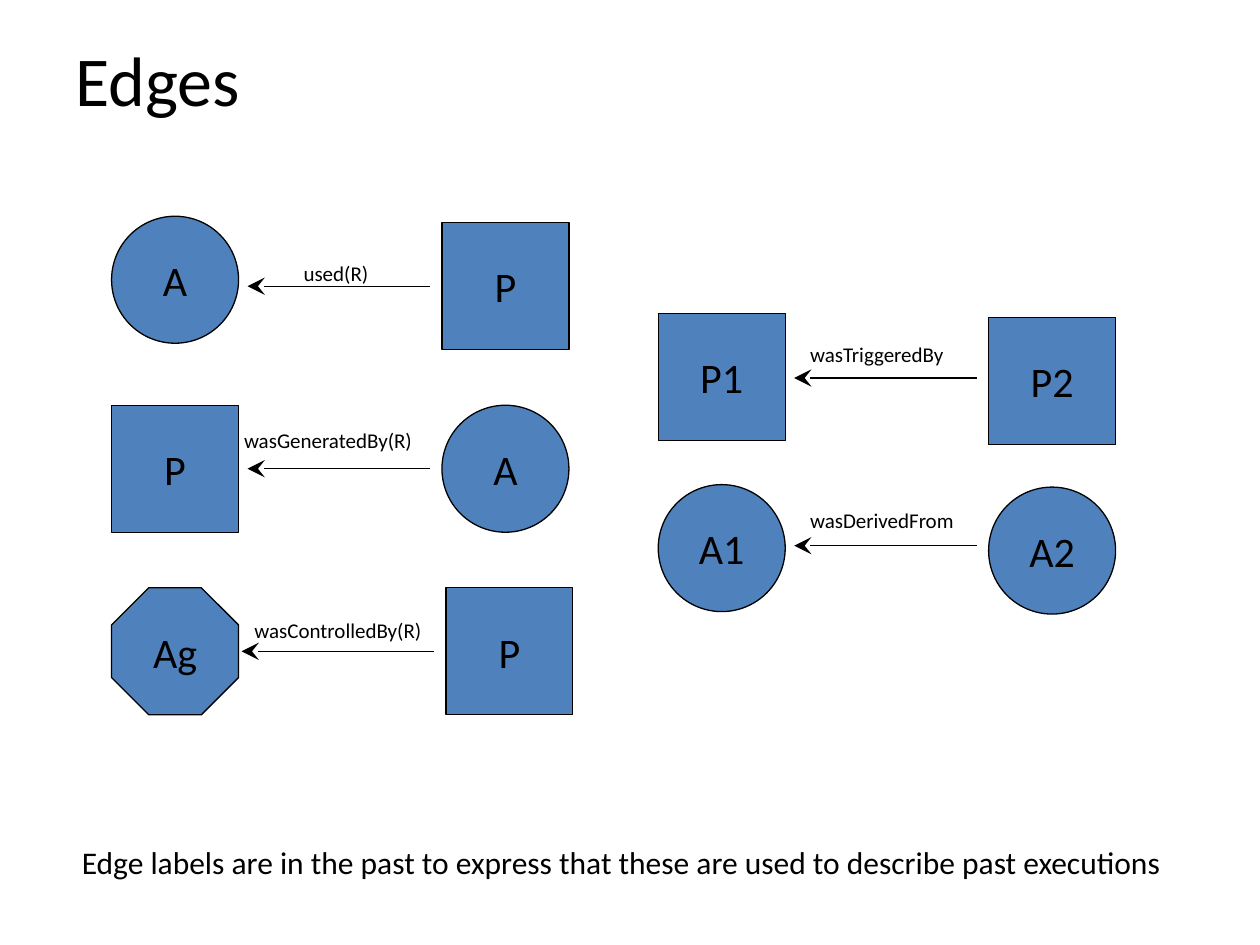
from dataclasses import dataclass, field

import pptx
import pptx.dml.color
import pptx.enum.shapes
import pptx.enum.text
import pptx.oxml
import pptx.oxml.ns
import pptx.slide
import pptx.text.text
import pptx.util

Cm = pptx.util.Cm
Pt = pptx.util.Pt
Color = pptx.dml.color.RGBColor
ShapeKind = pptx.enum.shapes.MSO_SHAPE
Anchor = pptx.enum.text.MSO_ANCHOR
Align = pptx.enum.text.PP_ALIGN

ARTIFACT = ShapeKind.OVAL
PROCESS = ShapeKind.RECTANGLE
AGENT = ShapeKind.OCTAGON

NODE_SIZE = 2.56
LABEL_HEIGHT = 0.76
LEFT_COLUMN = 2.25
RIGHT_COLUMN = 13.27
COLUMN_STEP = 6.66
SOURCE_GAP = 0.24
TARGET_GAP = 0.18


@dataclass(frozen=True)
class Theme:
    font: str = "Calibri"
    ink: Color = field(default_factory=lambda: Color(0x00, 0x00, 0x00))
    node_fill: Color = field(default_factory=lambda: Color(0x4F, 0x81, 0xBD))
    line_width: Pt = Pt(0.75)
    title_size: Pt = Pt(40)
    node_size: Pt = Pt(24)
    caption_size: Pt = Pt(18)
    label_size: Pt = Pt(12)


@dataclass(frozen=True)
class Node:
    text: str
    kind: ShapeKind
    top: float


@dataclass(frozen=True)
class Label:
    text: str
    left: float
    top: float
    width: float


@dataclass(frozen=True)
class Edge:
    column: float
    target: Node
    source: Node
    arrow_y: float
    label: Label
    step: float = COLUMN_STEP
    target_gap: float = TARGET_GAP


THEME = Theme()

EDGES = [
    Edge(LEFT_COLUMN, Node("A", ARTIFACT, 4.36), Node("P", PROCESS, 4.49), 5.77,
         Label("used(R)", 5.87, 5.13, 2.01)),
    Edge(LEFT_COLUMN, Node("P", PROCESS, 8.17), Node("A", ARTIFACT, 8.17), 9.45,
         Label("wasGeneratedBy(R)", 4.67, 8.5, 4.34)),
    Edge(LEFT_COLUMN, Node("Ag", AGENT, 11.85), Node("P", PROCESS, 11.85), 13.13,
         Label("wasControlledBy(R)", 4.88, 12.33, 4.27), step=6.74, target_gap=0.06),
    Edge(RIGHT_COLUMN, Node("P1", PROCESS, 6.32), Node("P2", PROCESS, 6.4), 7.62,
         Label("wasTriggeredBy", 16.08, 6.76, 3.56)),
    Edge(RIGHT_COLUMN, Node("A1", ARTIFACT, 9.77), Node("A2", ARTIFACT, 9.82), 11,
         Label("wasDerivedFrom", 16.08, 10.1, 3.7)),
]


def write(frame: pptx.text.text.TextFrame, text: str, size: Pt,
          alignment: Align, anchor: Anchor, wrap: bool) -> None:
    frame.word_wrap = wrap
    frame.vertical_anchor = anchor
    paragraph = frame.paragraphs[0]
    paragraph.text = text
    paragraph.alignment = alignment
    paragraph.font.name = THEME.font
    paragraph.font.size = size
    paragraph.font.color.rgb = THEME.ink


def add_text(slide: pptx.slide.Slide, label: Label, height: float, size: Pt,
             anchor: Anchor = Anchor.TOP, wrap: bool = False) -> None:
    shape = slide.shapes.add_textbox(
        Cm(label.left), Cm(label.top), Cm(label.width), Cm(height))
    write(shape.text_frame, label.text, size, Align.LEFT, anchor, wrap)


def add_node(slide: pptx.slide.Slide, node: Node, left: float) -> None:
    shape = slide.shapes.add_shape(
        node.kind, Cm(left), Cm(node.top), Cm(NODE_SIZE), Cm(NODE_SIZE))
    shape.shadow.inherit = False
    shape.fill.solid()
    shape.fill.fore_color.rgb = THEME.node_fill
    shape.line.color.rgb = THEME.ink
    shape.line.width = THEME.line_width
    write(shape.text_frame, node.text, THEME.node_size,
          Align.CENTER, Anchor.MIDDLE, False)


def add_arrow(slide: pptx.slide.Slide, start: float, end: float, y: float) -> None:
    connector = slide.shapes.add_connector(
        pptx.enum.shapes.MSO_CONNECTOR.STRAIGHT, Cm(start), Cm(y), Cm(end), Cm(y))
    connector.line.color.rgb = THEME.ink
    connector.line.width = THEME.line_width
    namespace = pptx.oxml.ns.nsdecls("a")
    connector.line._get_or_add_ln().append(pptx.oxml.parse_xml(
        f'<a:tailEnd {namespace} type="stealth" w="lg" len="lg"/>'))
    connector._element.spPr.append(pptx.oxml.parse_xml(f"<a:effectLst {namespace}/>"))


def add_edge(slide: pptx.slide.Slide, edge: Edge) -> None:
    source_left = edge.column + edge.step
    add_node(slide, edge.target, edge.column)
    add_node(slide, edge.source, source_left)
    add_text(slide, edge.label, LABEL_HEIGHT, THEME.label_size)
    add_arrow(slide, source_left - SOURCE_GAP,
              edge.column + NODE_SIZE + edge.target_gap, edge.arrow_y)


def main() -> None:
    presentation = pptx.Presentation()
    presentation.slide_width = Cm(25.4)
    presentation.slide_height = Cm(19.05)
    slide = presentation.slides.add_slide(presentation.slide_layouts[6])

    add_text(slide, Label("Edges", 1.27, 0, 18.85), 3.18, THEME.title_size,
             Anchor.MIDDLE, True)
    for edge in EDGES:
        add_edge(slide, edge)
    caption = ("Edge labels are in the past to express that these "
               "are used to describe past executions")
    add_text(slide, Label(caption, 1.4, 16.87, 22.53), 1.02, THEME.caption_size)

    presentation.save("out.pptx")


if __name__ == "__main__":
    main()
